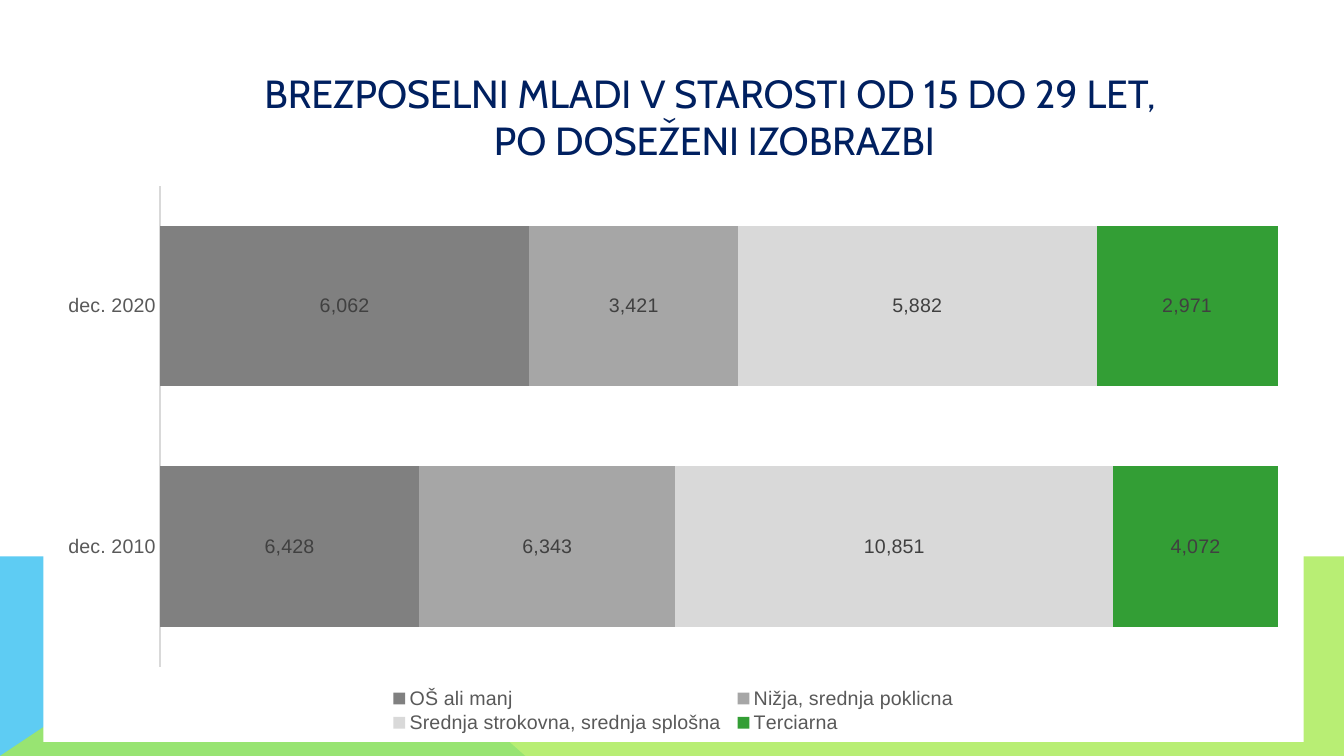
from lxml import etree
from pptx import Presentation
from pptx import util as u
from pptx.chart.data import CategoryChartData
from pptx.dml.color import RGBColor
from pptx.enum import chart as c
from pptx.enum import text as t
from pptx.oxml import parse_xml
from pptx.oxml.ns import nsdecls, qn

WHITE = RGBColor(0xFF, 0xFF, 0xFF)
NAVY = RGBColor(0x00, 0x20, 0x60)
BLUE = RGBColor(0x5E, 0xCC, 0xF3)
LIME = RGBColor(0xA7, 0xEA, 0x52)
LABEL_GREY = RGBColor(0x40, 0x40, 0x40)
AXIS_GREY = RGBColor(0x59, 0x59, 0x59)
LINE_GREY = RGBColor(0xD9, 0xD9, 0xD9)

CATEGORIES = ["dec. 2010", "dec. 2020"]
EDUCATION_LEVELS = [
    ("OŠ ali manj", (6428, 6062), RGBColor(0x80, 0x80, 0x80)),
    ("Nižja, srednja poklicna", (6343, 3421), RGBColor(0xA6, 0xA6, 0xA6)),
    ("Srednja strokovna, srednja splošna", (10851, 5882), LINE_GREY),
    ("Terciarna", (4072, 2971), RGBColor(0x33, 0x9E, 0x35)),
]


def set_attributes(target, **values):
    for name, value in values.items():
        setattr(target, name, value)


def format_font(font, color, size=14, name="Arial"):
    set_attributes(font, name=name, size=u.Pt(size), bold=False)
    font.color.rgb = color


def add_band(slide, points, color, opacity=100):
    corners = [(u.Inches(x), u.Inches(y)) for x, y in points]
    builder = slide.shapes.build_freeform(*corners[0])
    builder.add_line_segments(corners[1:], close=True)
    band = builder.convert_to_shape()
    band.shadow.inherit = False
    band.fill.solid()
    band.fill.fore_color.rgb = color
    band.line.fill.background()
    if opacity < 100:
        fill_color = band.fill._xPr.find(".//" + qn("a:srgbClr"))
        etree.SubElement(fill_color, qn("a:alpha"), val=str(opacity * 1000))


def add_bottom_bands(slide, left, top, width, height):
    right, bottom = left + width, top + height
    add_band(slide, [(left, bottom), (left, top), (left + 2.98, top),
                     (left + 5.21, bottom)], BLUE)
    add_band(slide, [(left, bottom), (left + 2.97, top), (right, top),
                     (right, bottom)], LIME, 80)


def format_title(slide, left, top, width, height):
    title = slide.shapes.title
    set_attributes(title, left=u.Inches(left), top=u.Inches(top),
                   width=u.Inches(width), height=u.Inches(height))
    frame = title.text_frame
    set_attributes(frame, word_wrap=True, auto_size=t.MSO_AUTO_SIZE.NONE,
                   vertical_anchor=t.MSO_ANCHOR.MIDDLE)
    frame.text = ("BREZPOSELNI MLADI V STAROSTI OD 15 DO 29 LET, \n"
                  "PO DOSEŽENI IZOBRAZBI")
    for paragraph in frame.paragraphs:
        set_attributes(paragraph, alignment=t.PP_ALIGN.CENTER,
                       line_spacing=1.0, space_before=u.Pt(0))
        format_font(paragraph.runs[0].font, NAVY, 28, "Cabin")


def place_in_chart(element, index, target, **fractions):
    """Fix a chart part's place, given as fractions of the chart area."""
    for layout in element.findall(qn("c:layout")):
        element.remove(layout)
    sizes = "".join(f'<c:{key} val="{value}"/>'
                    for key, value in fractions.items())
    element.insert(index, parse_xml(
        f'<c:layout {nsdecls("c")}><c:manualLayout>{target}'
        f'<c:xMode val="edge"/><c:yMode val="edge"/>{sizes}'
        '</c:manualLayout></c:layout>'))


def fill_chart_area(chart, color):
    chart_space = chart._chartSpace
    chart_space.find(qn("c:chart")).addnext(parse_xml(
        f'<c:spPr {nsdecls("c", "a")}><a:solidFill><a:srgbClr val="{color}"/>'
        '</a:solidFill><a:ln><a:noFill/></a:ln></c:spPr>'))


def format_axes(chart):
    for axis in (chart.category_axis, chart.value_axis):
        set_attributes(axis, has_major_gridlines=False,
                       major_tick_mark=c.XL_TICK_MARK.NONE,
                       minor_tick_mark=c.XL_TICK_MARK.NONE)
        format_font(axis.tick_labels.font, AXIS_GREY)
    line = chart.category_axis.format.line
    line.color.rgb = LINE_GREY
    line.width = u.Pt(1.5)
    chart.value_axis.tick_label_position = c.XL_TICK_LABEL_POSITION.NONE
    chart.value_axis.format.line.fill.background()


def add_education_chart(slide, left, top, width, height):
    data = CategoryChartData(number_format="#,##0")
    data.categories = CATEGORIES
    for name, values, _ in EDUCATION_LEVELS:
        data.add_series(name, values)
    chart = slide.shapes.add_chart(
        c.XL_CHART_TYPE.BAR_STACKED_100, u.Inches(left), u.Inches(top),
        u.Inches(width), u.Inches(height), data).chart
    format_font(chart.font, AXIS_GREY)
    set_attributes(chart, has_title=False, has_legend=True)
    fill_chart_area(chart, WHITE)
    format_axes(chart)

    plot = chart.plots[0]
    set_attributes(plot, gap_width=50, overlap=100, vary_by_categories=False)
    for series, (_, _, color) in zip(plot.series, EDUCATION_LEVELS):
        series.format.fill.solid()
        series.format.fill.fore_color.rgb = color
        labels = series.data_labels
        set_attributes(labels, show_value=True, number_format="#,##0",
                       number_format_is_linked=False,
                       position=c.XL_LABEL_POSITION.CENTER)
        format_font(labels.font, LABEL_GREY)

    legend = chart.legend
    set_attributes(legend, position=c.XL_LEGEND_POSITION.BOTTOM,
                   include_in_layout=False)
    format_font(legend.font, AXIS_GREY)
    plot_area = chart._chartSpace.find(".//" + qn("c:plotArea"))
    place_in_chart(plot_area, 0, '<c:layoutTarget val="inner"/>',
                   x=0.0925, y=0.0185, w=0.887, h=0.849)
    place_in_chart(legend._element, 1, "", x=0.27, y=0.9, w=0.46, h=0.09)


def main():
    presentation = Presentation()
    set_attributes(presentation, slide_width=u.Inches(13.33),
                   slide_height=u.Inches(7.5))
    slide = presentation.slides.add_slide(presentation.slide_layouts[5])
    add_bottom_bands(slide, 0, 5.52, 13.33, 1.98)
    format_title(slide, 2.33, 0.57, 9.51, 1.17)
    add_education_chart(slide, 0.43, 1.74, 12.5, 5.62)
    presentation.save("out.pptx")


if __name__ == "__main__":
    main()
